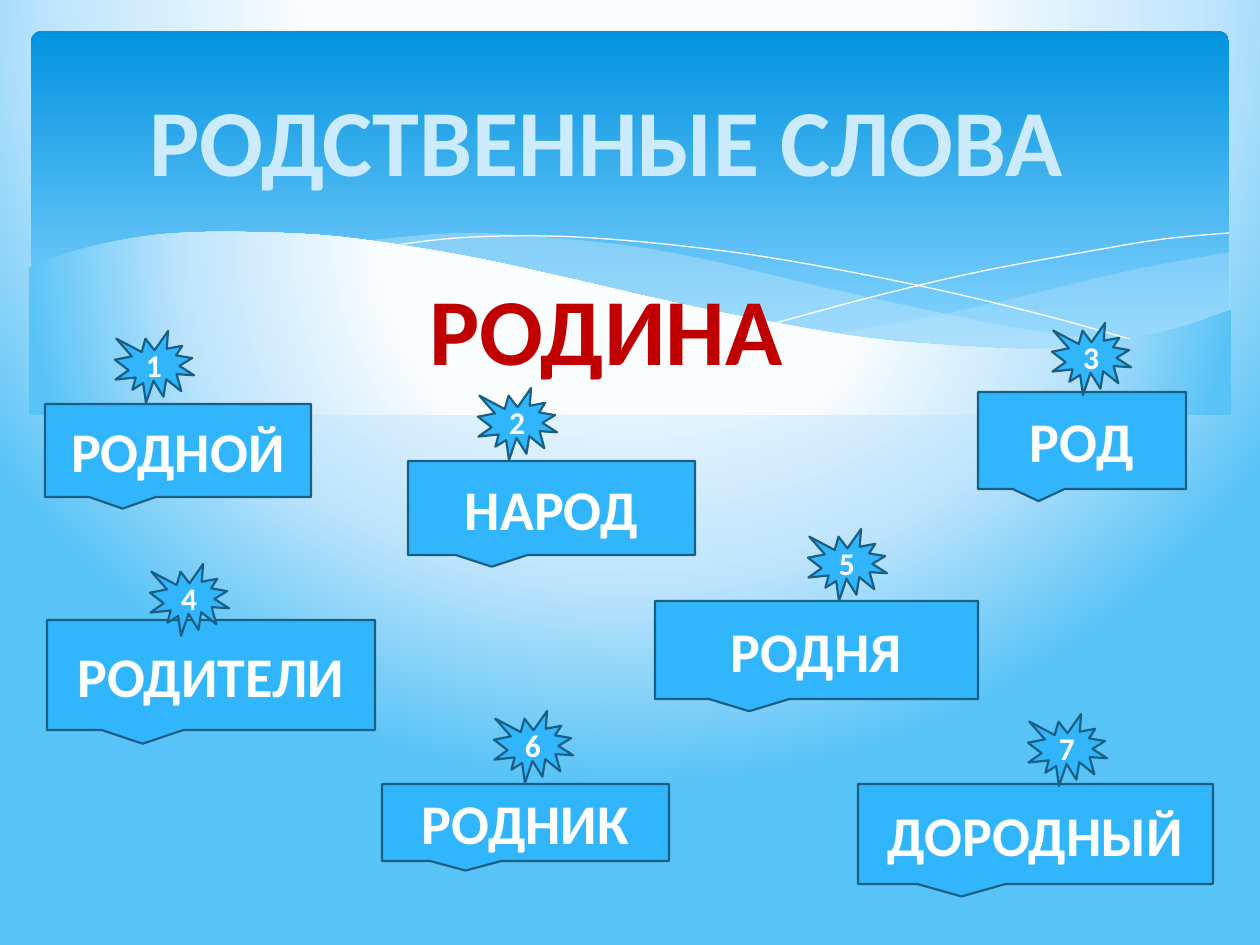
from lxml.etree import SubElement as Sub
from pptx import Presentation
from pptx.dml.color import RGBColor as Rgb
from pptx.enum.shapes import MSO_SHAPE as Kind
from pptx.enum.text import MSO_ANCHOR as Anchor, MSO_AUTO_SIZE as Fit, PP_ALIGN as Align
from pptx.oxml.ns import qn
from pptx.util import Emu, Pt

SCALE = 914400 / 126
WHITE = Rgb(0xFF, 0xFF, 0xFF)
PALE = Rgb(0xCD, 0xEB, 0xFF)
RED = Rgb(0xC0, 0x00, 0x00)
BLUE = Rgb(0x31, 0xB6, 0xFD)
NAVY = Rgb(0x19, 0x5F, 0x84)
MIST = Rgb(0xC6, 0xE7, 0xFC)
GLOW = {40: Rgb(0xFA, 0xFD, 0xFE), 74: Rgb(0xBE, 0xE4, 0xFC), 100: Rgb(0x58, 0xC3, 0xF6)}
SKY = {0: Rgb(0x02, 0x93, 0xE0), 90: Rgb(0x83, 0xD3, 0xFE)}
FOCUS = {"l": 20, "t": -40, "r": 20, "b": 140}
BIG = {"name": "Calibri", "bold": True, "size": Pt(54)}
MID = {**BIG, "size": Pt(32)}
SMALL = {**BIG, "size": Pt(18)}

CREST = [(29, 268), (58, 256), (107, 243), (166, 234), (243, 232), (341, 237),
         (460, 255), (563, 277), (667, 301), (760, 320), (867, 338), (959, 346),
         (1037, 349), (1103, 344), (1172, 330), (1231, 310)]
BASE = [(1231, 415), (29, 415)]
RIGHT = [[(1230, 252), (1142, 268), (1085, 281), (949, 313), (833, 334)],
         [(833, 334), (922, 345), (998, 349), (1088, 347), (1150, 336),
          (1196, 324), (1230, 311)]]
MIDDLE = [[(1125, 344), (1017, 328), (890, 302), (793, 280), (699, 258),
           (616, 244), (529, 236), (455, 233), (360, 241)],
          [(360, 241), (456, 256), (566, 280), (713, 312), (838, 335),
           (943, 348), (1031, 350), (1125, 344)]]
FALL = [(389, 246), (457, 238), (546, 236), (643, 242), (766, 257), (916, 285),
        (1047, 316), (1143, 343)]
RISE = [(772, 324), (876, 296), (978, 272), (1091, 251), (1164, 239), (1229, 233)]

CARDS = [("РОДНОЙ", "1", (45, 404, 266, 93), (70, -73)),
         ("РОДИТЕЛИ", "4", (47, 620, 328, 110), (103, -56)),
         ("НАРОД", "2", (408, 461, 287, 94), (70, -73)),
         ("РОДНИК", "6", (382, 784, 287, 77), (112, -73)),
         ("РОДНЯ", "5", (655, 601, 323, 98), (153, -72)),
         ("РОД", "3", (978, 392, 208, 97), (74, -69)),
         ("ДОРОДНЫЙ", "7", (858, 784, 355, 100), (170, -70))]


def px(*vals):
    """Turn pixels into EMU."""
    return [Emu(round(v * SCALE)) for v in vals]


def shade(fill, root, stops, focus=None):
    """Give a fill gradient stops, around a focus or straight down."""
    fill.gradient()
    grad = root.find(".//" + qn("a:gradFill"))
    for kid in list(grad):
        grad.remove(kid)
    rows = Sub(grad, qn("a:gsLst"))
    for pos, tint in stops.items():
        stop = Sub(rows, qn("a:gs"), pos=str(pos * 1000))
        Sub(stop, qn("a:srgbClr"), val=str(tint))
    if focus:
        ring = Sub(grad, qn("a:path"), path="circle")
        Sub(ring, qn("a:fillToRect"), {k: str(v * 1000) for k, v in focus.items()})
    else:
        Sub(grad, qn("a:lin"), ang="5400000", scaled="0")


def curve(knots, steps=6):
    """Return points on a smooth curve through the knots."""
    ends = [knots[0], *knots, knots[-1]]
    dots = [knots[0]]
    for a, b, c, d in zip(ends, ends[1:], ends[2:], ends[3:]):
        for i in range(1, steps + 1):
            t = i / steps
            dots.append(tuple(
                q + t / 2 * (r - p + t * (2 * p - 5 * q + 4 * r - s
                                          + t * (3 * (q - r) + s - p)))
                for p, q, r, s in zip(a, b, c, d)))
    return dots


def trace(slide, left, top, dots, close=True):
    """Draw an outline through dots given from a corner."""
    first, *rest = [px(left + x, top + y) for x, y in dots]
    pen = slide.shapes.build_freeform(*first, scale=1.0)
    pen.add_line_segments(rest, close=close)
    shape = pen.convert_to_shape()
    shape.shadow.inherit = False
    shape.line.fill.background()
    return shape


def write(shape, text, tint, style):
    """Set one centred line of text."""
    para = shape.text_frame.paragraphs[0]
    para.alignment = Align.CENTER
    run = para.add_run()
    run.text = text
    for key, val in style.items():
        setattr(run.font, key, val)
    run.font.color.rgb = tint


def banner(slide, left, top, wide, high):
    """Draw the header panel and its waves."""
    panel = slide.shapes.add_shape(
        Kind.ROUNDED_RECTANGLE, *px(left + 31, top + 31, wide - 62, high - 75))
    panel.adjustments[0] = 0.03
    panel.shadow.inherit = False
    panel.line.fill.background()
    shade(panel.fill, panel.element, SKY)
    for parts, alpha in ((RIGHT, 29), (MIDDLE, 40)):
        wave = trace(slide, left, top, [dot for part in parts for dot in curve(part)])
        wave.fill.solid()
        wave.fill.fore_color.rgb = MIST
        tint = wave.element.find(".//" + qn("a:srgbClr"))
        Sub(tint, qn("a:alpha"), val=str(alpha * 1000))
    for knots in (FALL, RISE):
        thread = trace(slide, left, top, curve(knots), close=False)
        thread.fill.background()
        thread.line.color.rgb = WHITE
        thread.line.width = Pt(0)
    crest = trace(slide, left, top, curve(CREST) + BASE)
    shade(crest.fill, crest.element, GLOW, FOCUS)


def head(slide, box, text, tint):
    """Place a large heading."""
    shape = slide.shapes.add_textbox(*px(*box))
    shape.text_frame.word_wrap = False
    shape.text_frame.auto_size = Fit.SHAPE_TO_FIT_TEXT
    write(shape, text, tint, BIG)


def card(slide, box, word, num, shift):
    """Draw a word callout with its numbered burst."""
    burst = (box[0] + shift[0], box[1] + shift[1], 79, 72)
    for kind, area, text, style in (
            (Kind.RECTANGULAR_CALLOUT, box, word, MID),
            (Kind.EXPLOSION1, burst, num, SMALL)):
        shape = slide.shapes.add_shape(kind, *px(*area))
        shape.shadow.inherit = False
        shape.fill.solid()
        shape.fill.fore_color.rgb = BLUE
        shape.line.color.rgb = NAVY
        shape.line.width = Pt(1.25)
        shape.text_frame.vertical_anchor = Anchor.MIDDLE
        write(shape, text, WHITE, style)


def main():
    """Build and save the slide."""
    deck = Presentation()
    deck.slide_width, deck.slide_height = px(1260, 945)
    slide = deck.slides.add_slide(deck.slide_layouts[6])
    shade(slide.background.fill, slide.element, GLOW, FOCUS)
    banner(slide, 0, 0, 1260, 415)
    head(slide, (115, 76, 983, 127), "РОДСТВЕННЫЕ СЛОВА", PALE)
    head(slide, (408, 265, 396, 127), "РОДИНА", RED)
    for word, num, box, shift in CARDS:
        card(slide, box, word, num, shift)
    deck.save("out.pptx")


if __name__ == "__main__":
    main()
